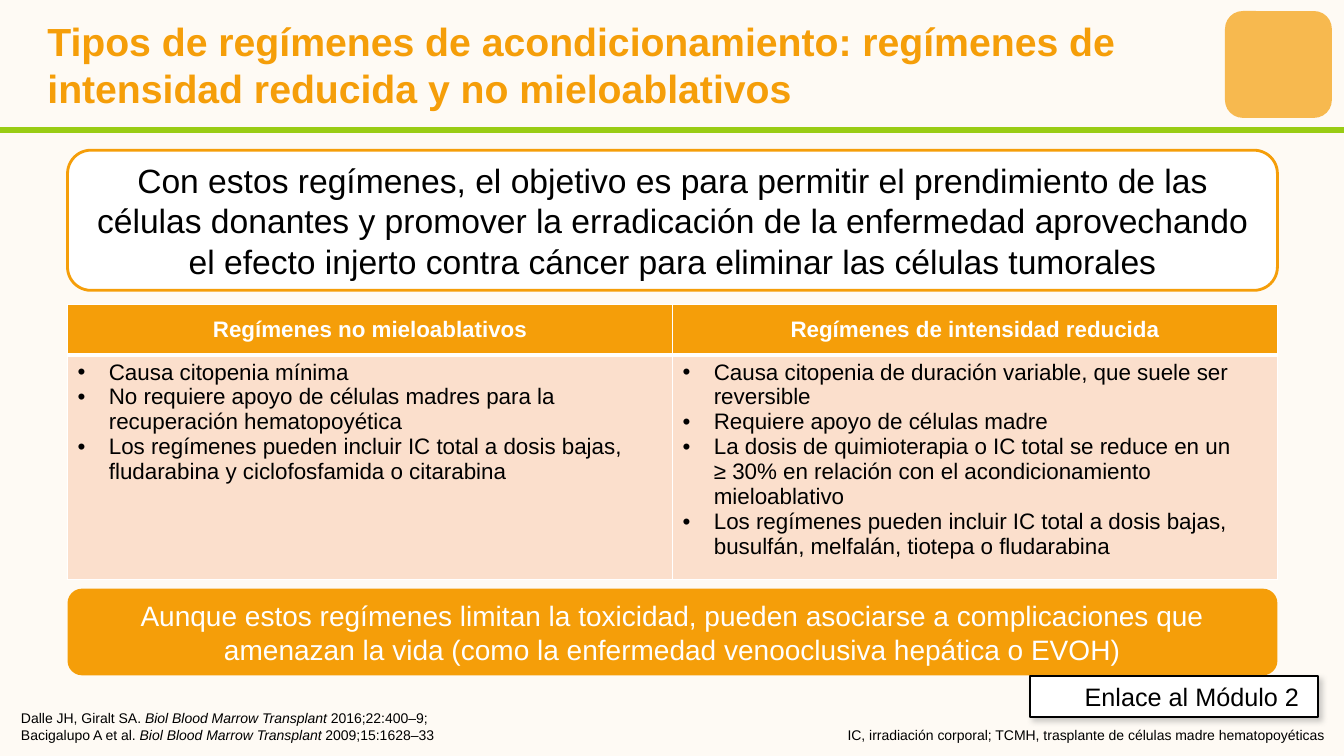
from lxml.etree import SubElement
from pptx import Presentation
from pptx.dml.color import RGBColor
from pptx.enum.shapes import MSO_CONNECTOR, MSO_SHAPE
from pptx.enum.text import MSO_ANCHOR, MSO_AUTO_SIZE, PP_ALIGN
from pptx.oxml import parse_xml
from pptx.oxml.ns import nsdecls, qn
from pptx.util import Inches, Pt

ORANGE = RGBColor(0xF5, 0x9E, 0x09)
PEACH = RGBColor(0xFB, 0xDF, 0xCC)
CREAM = RGBColor(0xFE, 0xFA, 0xF4)
GREEN = RGBColor(0x99, 0xCC, 0x14)
WHITE = RGBColor(0xFF, 0xFF, 0xFF)
BLACK = RGBColor(0x00, 0x00, 0x00)

TITLE = ("Tipos de regímenes de acondicionamiento: regímenes de "
         "intensidad reducida y no mieloablativos")
GOAL = ("Con estos regímenes, el objetivo es para permitir el prendimiento de las "
        "células donantes y promover la erradicación de la enfermedad aprovechando "
        "el efecto injerto contra cáncer para eliminar las células tumorales")
WARNING = ("Aunque estos regímenes limitan la toxicidad, pueden asociarse a complicaciones "
           "que amenazan la vida (como la enfermedad venooclusiva hepática o EVOH)")
REGIMENS = {
    "Regímenes no mieloablativos": [
        "Causa citopenia mínima",
        "No requiere apoyo de células madres para la recuperación hematopoyética",
        "Los regímenes pueden incluir IC total a dosis bajas, fludarabina y "
        "ciclofosfamida o citarabina",
    ],
    "Regímenes de intensidad reducida": [
        "Causa citopenia de duración variable, que suele ser reversible",
        "Requiere apoyo de células madre",
        "La dosis de quimioterapia o IC total se reduce en un\v"
        "≥ 30% en relación con el acondicionamiento mieloablativo",
        "Los regímenes pueden incluir IC total a dosis bajas, busulfán, melfalán, "
        "tiotepa o fludarabina",
    ],
}
JOURNAL = "Biol Blood Marrow Transplant "
REFERENCES = [("Dalle JH, Giralt SA. ", "2016;22:400–9;"),
              ("Bacigalupo A et al. ", "2009;15:1628–33")]
ABBREVIATIONS = "IC, irradiación corporal; TCMH, trasplante de células madre hematopoyéticas"


def set_font(paragraph, size, color, bold=False):
    font = paragraph.font
    font.name, font.size, font.bold = "Arial", Pt(size), bold
    font.color.rgb = color


def add_panel(slide, preset, box, fill, line=None, width=0):
    shape = slide.shapes.add_shape(preset, *map(Inches, box))
    shape.shadow.inherit = False
    shape.fill.solid()
    shape.fill.fore_color.rgb = fill
    if line is None:
        shape.line.fill.background()
    else:
        shape.line.color.rgb = line
        shape.line.width = Pt(width)
    return shape


def write_panel(shape, text, size, color):
    frame = shape.text_frame
    frame.word_wrap = True
    frame.vertical_anchor = MSO_ANCHOR.MIDDLE
    paragraph = frame.paragraphs[0]
    paragraph.text = text
    paragraph.alignment = PP_ALIGN.CENTER
    set_font(paragraph, size, color)


def add_header(slide, left, top, width, height):
    title = slide.shapes.title
    title.left, title.top = Inches(left + 0.37), Inches(top + 0.09)
    title.width, title.height = Inches(width - 1.55), Inches(height - 0.19)
    frame = title.text_frame
    frame.text = TITLE
    frame.word_wrap = True
    frame.auto_size = MSO_AUTO_SIZE.NONE
    frame.vertical_anchor = MSO_ANCHOR.MIDDLE
    paragraph = frame.paragraphs[0]
    paragraph.alignment = PP_ALIGN.LEFT
    set_font(paragraph, 28, ORANGE, True)

    emblem_box = (left + width - 1.18, top + 0.11, 1.06, 1.06)
    emblem = add_panel(slide, MSO_SHAPE.ROUNDED_RECTANGLE, emblem_box, ORANGE)
    color = emblem.fill._xPr.find(qn("a:solidFill"))[0]
    SubElement(color, qn("a:alpha"), val="70000")

    bottom = Inches(top + height + 0.01)
    rule = slide.shapes.add_connector(
        MSO_CONNECTOR.STRAIGHT, Inches(left), bottom, Inches(left + width), bottom)
    rule.line.color.rgb = GREEN
    rule.line.width = Pt(4.5)
    SubElement(rule._element.spPr, qn("a:effectLst"))


def set_borders(cell, bottom_width):
    properties = cell._tc.get_or_add_tcPr()
    widths = {"lnL": 1, "lnR": 1, "lnT": 1, "lnB": bottom_width}
    for index, (side, width) in enumerate(widths.items()):
        properties.insert(index, parse_xml(
            f'<a:{side} {nsdecls("a")} w="{Pt(width)}"><a:solidFill>'
            f'<a:srgbClr val="{WHITE}"/></a:solidFill></a:{side}>'))


def fill_cell(cell, color, bottom_width):
    cell.fill.solid()
    cell.fill.fore_color.rgb = color
    set_borders(cell, bottom_width)


def add_bullet(paragraph, text):
    paragraph.text = text
    properties = paragraph._p.get_or_add_pPr()
    properties.set("marL", str(Inches(0.31)))
    properties.set("indent", str(-Inches(0.31)))
    SubElement(properties, qn("a:buFont"), typeface="Arial")
    SubElement(properties, qn("a:buChar"), char="•")
    set_font(paragraph, 16, BLACK)


def add_regimen_table(slide, left, top, width, height):
    header_height = 0.5
    table = slide.shapes.add_table(
        2, len(REGIMENS), *map(Inches, (left, top, width, height))).table
    table.rows[0].height = Inches(header_height)
    table.rows[1].height = Inches(height - header_height)
    for column, (heading, bullets) in enumerate(REGIMENS.items()):
        table.columns[column].width = Inches(width / len(REGIMENS))
        header, body = table.cell(0, column), table.cell(1, column)
        fill_cell(header, ORANGE, 3)
        fill_cell(body, PEACH, 1)
        header.vertical_anchor = MSO_ANCHOR.MIDDLE
        paragraph = header.text_frame.paragraphs[0]
        paragraph.text = heading
        paragraph.alignment = PP_ALIGN.CENTER
        set_font(paragraph, 16, WHITE, True)
        frame = body.text_frame
        for index, text in enumerate(bullets):
            add_bullet(frame.add_paragraph() if index else frame.paragraphs[0], text)


def add_module_button(slide, left, top, width, height):
    button = add_panel(slide, MSO_SHAPE.RECTANGLE, (left, top, width, height), WHITE, BLACK, 1.5)
    write_panel(button, "Enlace al Módulo 2", 18, BLACK)
    button.text_frame.margin_left = Inches(0.45)
    effects = button._element.spPr.find(qn("a:effectLst"))
    effects.append(parse_xml(
        f'<a:outerShdw {nsdecls("a")} blurRad="{Pt(4)}" dist="{Pt(3)}" dir="2700000">'
        '<a:srgbClr val="808080"><a:alpha val="40000"/></a:srgbClr></a:outerShdw>'))


def add_footnote(slide, left, top, width, height, alignment):
    frame = slide.shapes.add_textbox(*map(Inches, (left, top, width, height))).text_frame
    frame.word_wrap = True
    frame.vertical_anchor = MSO_ANCHOR.BOTTOM
    paragraph = frame.paragraphs[0]
    paragraph.alignment = alignment
    set_font(paragraph, 10, BLACK)
    return paragraph


def add_footer(slide, left, top, width, height):
    note_width = 7.98
    references = add_footnote(slide, left, top, note_width, height, PP_ALIGN.LEFT)
    for index, (authors, issue) in enumerate(REFERENCES):
        if index:
            references.add_line_break()
        for text in (authors, JOURNAL, issue):
            run = references.add_run()
            run.text = text
            run.font.italic = text == JOURNAL
    abbreviations = add_footnote(
        slide, left + width - note_width, top, note_width, height, PP_ALIGN.RIGHT)
    abbreviations.add_run().text = ABBREVIATIONS


def main():
    presentation = Presentation()
    presentation.slide_width, presentation.slide_height = Inches(13.33), Inches(7.5)
    slide = presentation.slides.add_slide(presentation.slide_layouts[5])
    slide.background.fill.solid()
    slide.background.fill.fore_color.rgb = CREAM
    left, width = 0.67, 12
    add_header(slide, 0, 0, 13.33, 1.28)
    add_footer(slide, 0.11, 7.1, 13.12, 0.32)
    add_regimen_table(slide, left, 3.02, width, 2.66)
    rounded = MSO_SHAPE.ROUNDED_RECTANGLE
    warning = add_panel(slide, rounded, (left, 5.84, width, 0.86), ORANGE)
    write_panel(warning, WARNING, 20, WHITE)
    goal = add_panel(slide, rounded, (left, 1.49, width, 1.39), WHITE, ORANGE, 2)
    write_panel(goal, GOAL, 24, BLACK)
    add_module_button(slide, 10.22, 6.71, 2.85, 0.4)
    presentation.save("out.pptx")


if __name__ == "__main__":
    main()
